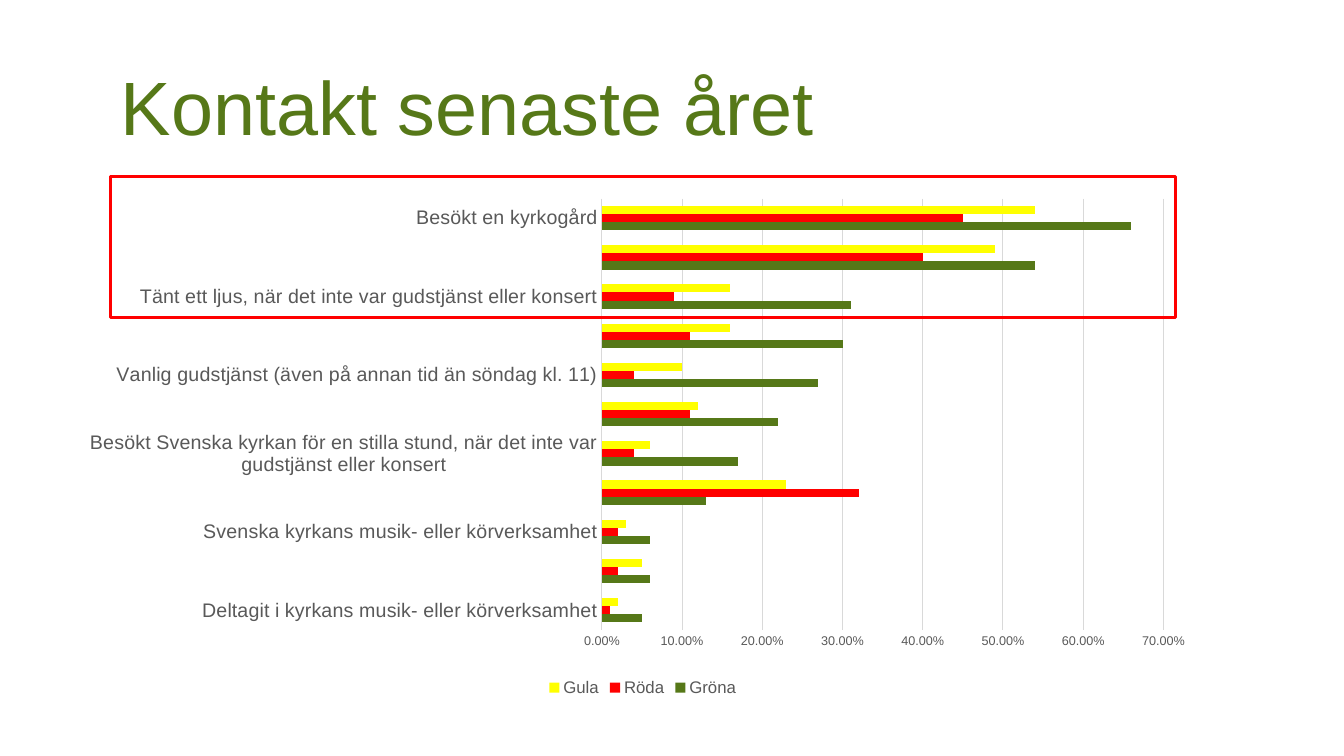
"""Builds a slide with a bar chart of church contacts during the past year."""
from lxml import etree
from pptx import Presentation
from pptx.chart.data import CategoryChartData
from pptx.dml.color import RGBColor
from pptx.enum.chart import XL_CHART_TYPE, XL_LEGEND_POSITION, XL_TICK_MARK
from pptx.enum.shapes import MSO_SHAPE
from pptx.enum.text import MSO_ANCHOR
from pptx.oxml.ns import qn
from pptx.util import Pt

GREEN = RGBColor(0x56, 0x78, 0x18)
RED = RGBColor(0xFF, 0x00, 0x00)
YELLOW = RGBColor(0xFF, 0xFF, 0x00)
GREY = RGBColor(0x59, 0x59, 0x59)
LIGHT_GREY = RGBColor(0xD9, 0xD9, 0xD9)
BARS = XL_CHART_TYPE.BAR_CLUSTERED
BOTTOM = XL_LEGEND_POSITION.BOTTOM
NO_TICK = XL_TICK_MARK.NONE
RECTANGLE = MSO_SHAPE.RECTANGLE
MIDDLE = MSO_ANCHOR.MIDDLE

FONT = "Arial"
TITLE = "Kontakt senaste året"
SERIES = [("Gröna", GREEN), ("Röda", RED), ("Gula", YELLOW)]
UNLABELLED = ""
CONTACTS = [
    ("Deltagit i kyrkans musik- eller körverksamhet", 0.05, 0.01, 0.02),
    (UNLABELLED, 0.06, 0.02, 0.05),
    ("Svenska kyrkans musik- eller körverksamhet", 0.06, 0.02, 0.03),
    (UNLABELLED, 0.13, 0.32, 0.23),
    ("Besökt Svenska kyrkan för en stilla stund, när det inte var gudstjänst eller konsert",
     0.17, 0.04, 0.06),
    (UNLABELLED, 0.22, 0.11, 0.12),
    ("Vanlig gudstjänst (även på annan tid än söndag kl. 11)", 0.27, 0.04, 0.1),
    (UNLABELLED, 0.3, 0.11, 0.16),
    ("Tänt ett ljus, när det inte var gudstjänst eller konsert", 0.31, 0.09, 0.16),
    (UNLABELLED, 0.54, 0.4, 0.49),
    ("Besökt en kyrkogård", 0.66, 0.45, 0.54),
]

EMU_PER_PX = 9144
SLIDE_SIZE = (1333, 750)
TITLE_BOX = (110, 44, 1115, 137)
CHART_BOX = (75, 175, 1125, 520)
HIGHLIGHT_BOX = (110, 175, 1056, 140)
PLOT_BOX = (522, 22, 557, 428)


def emu(lengths):
    return [length * EMU_PER_PX for length in lengths]


def style_font(font, size, color):
    font.name = FONT
    font.size = Pt(size)
    font.color.rgb = color


def add_title(slide):
    frame = slide.shapes.add_textbox(*emu(TITLE_BOX)).text_frame
    frame.word_wrap = True
    frame.vertical_anchor = MIDDLE
    frame.text = TITLE
    heading = frame.paragraphs[0]
    heading.line_spacing = 0.8
    style_font(heading.runs[0].font, 54, GREEN)


def place_plot(chart):
    plot_area = chart.plots[0]._element.getparent()
    layout = plot_area.find(qn("c:layout"))
    if layout is None:
        layout = etree.Element(qn("c:layout"))
        plot_area.insert(0, layout)
    manual = etree.SubElement(layout, qn("c:manualLayout"))
    left, top, width, height = PLOT_BOX
    chart_width, chart_height = CHART_BOX[2:]
    settings = [
        ("layoutTarget", "inner"), ("xMode", "edge"), ("yMode", "edge"),
        ("x", left / chart_width), ("y", top / chart_height),
        ("w", width / chart_width), ("h", height / chart_height),
    ]
    for tag, value in settings:
        etree.SubElement(manual, qn(f"c:{tag}"), val=str(value))


def style_axes(chart):
    contacts, shares = chart.category_axis, chart.value_axis
    for axis, size in ((contacts, 14), (shares, 9)):
        axis.major_tick_mark = NO_TICK
        axis.minor_tick_mark = NO_TICK
        style_font(axis.tick_labels.font, size, GREY)
    shares.minimum_scale, shares.maximum_scale, shares.major_unit = 0, 0.7, 0.1
    shares.tick_labels.number_format = "0.00%"
    shares.tick_labels.number_format_is_linked = False
    shares.format.line.fill.background()
    shares.has_major_gridlines = True
    for line in (contacts.format.line, shares.major_gridlines.format.line):
        line.color.rgb = LIGHT_GREY
        line.width = Pt(0.75)


def add_contact_chart(slide):
    labels, *columns = zip(*CONTACTS)
    chart_data = CategoryChartData(number_format="0.00%")
    chart_data.categories = labels
    for (name, _), shares in zip(SERIES, columns):
        chart_data.add_series(name, shares)
    chart = slide.shapes.add_chart(BARS, *emu(CHART_BOX), chart_data).chart
    chart.has_title = False
    chart.font.name = FONT
    chart.font.size = Pt(10)
    bars = chart.plots[0]
    bars.gap_width = 182
    bars.vary_by_categories = False
    for group, (_, color) in zip(bars.series, SERIES):
        group.format.fill.solid()
        group.format.fill.fore_color.rgb = color
        group.invert_if_negative = False
    style_axes(chart)
    place_plot(chart)
    chart.has_legend = True
    chart.legend.position = BOTTOM
    chart.legend.include_in_layout = False
    style_font(chart.legend.font, 12, GREY)


def add_highlight(slide):
    highlight = slide.shapes.add_shape(RECTANGLE, *emu(HIGHLIGHT_BOX))
    highlight.shadow.inherit = False
    highlight.fill.background()
    highlight.line.color.rgb = RED
    highlight.line.width = Pt(2.25)


def main():
    deck = Presentation()
    deck.slide_width, deck.slide_height = emu(SLIDE_SIZE)
    slide = deck.slides.add_slide(deck.slide_layouts[6])
    add_title(slide)
    add_contact_chart(slide)
    add_highlight(slide)
    deck.save("out.pptx")


if __name__ == "__main__":
    main()
